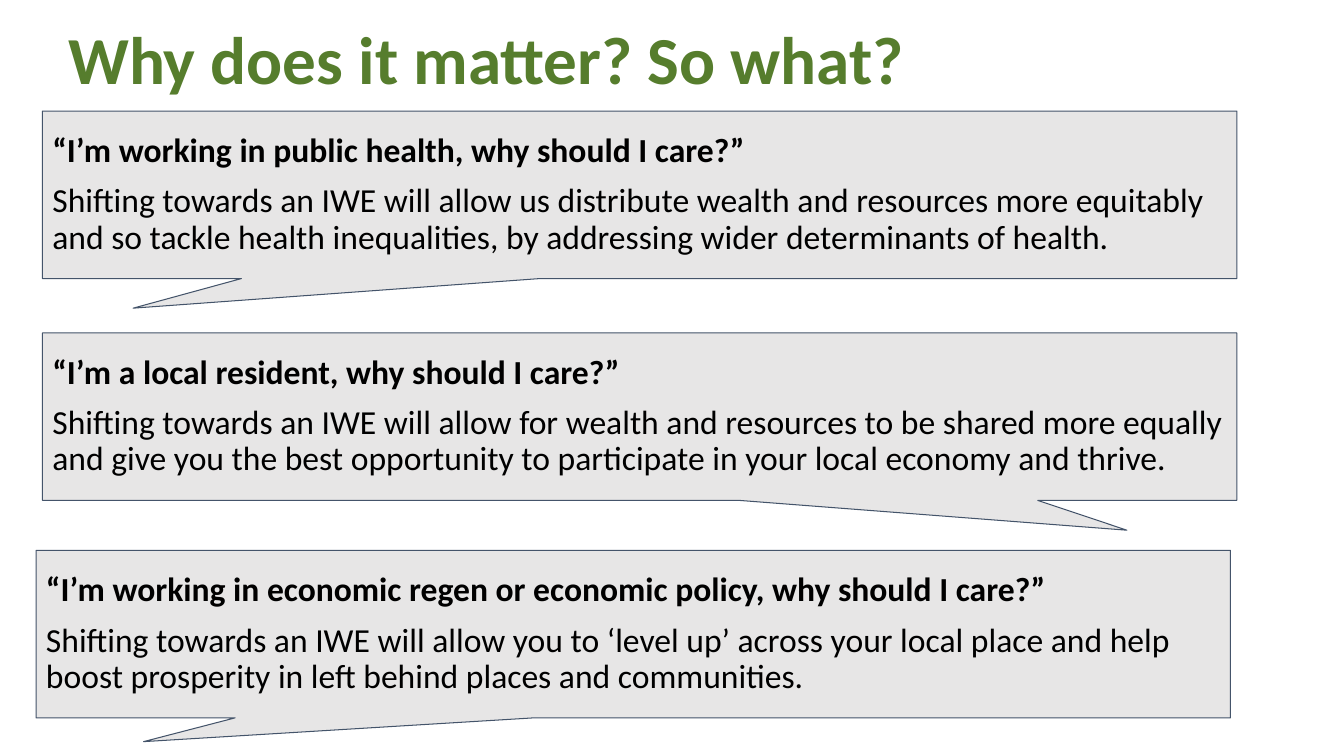
from pptx import Presentation
from pptx import util as u
from pptx.dml.color import RGBColor
from pptx.enum import shapes, text

COLORS = {"title": "567D2D", "body": "000000", "bubble": "E7E6E6", "outline": "44546A"}


def write(frame, content, size=24, color="body", bold=False, before=0, first=False):
    paragraph = frame.paragraphs[0] if first else frame.add_paragraph()
    paragraph.alignment = text.PP_ALIGN.LEFT
    paragraph.line_spacing = 0.9
    paragraph.space_before = u.Pt(before)
    run = paragraph.add_run()
    run.text = content
    run.font.name = "Calibri"
    run.font.size = u.Pt(size)
    run.font.bold = bold
    run.font.color.rgb = RGBColor.from_string(COLORS[color])


class SlideWriter:
    """Draws the heading and speech bubbles in one style on the current slide."""

    def __init__(self, slide):
        self.slide = slide

    def prepare(self, frame, anchor, margin):
        frame.word_wrap = True
        frame.vertical_anchor = anchor
        frame.margin_left = frame.margin_right = u.Cm(0.25)
        frame.margin_top = frame.margin_bottom = u.Cm(margin)
        return frame

    def heading(self, content, left, top, width, height):
        box = self.slide.shapes.add_textbox(u.Cm(left), u.Cm(top), u.Cm(width), u.Cm(height))
        frame = self.prepare(box.text_frame, text.MSO_ANCHOR.BOTTOM, 0.13)
        write(frame, content, size=48, color="title", bold=True, first=True)

    def bubble(self, question, answer, left, top, tail):
        bubble = self.slide.shapes.add_shape(
            shapes.MSO_SHAPE.ROUNDED_RECTANGULAR_CALLOUT,
            u.Cm(left), u.Cm(top), u.Cm(30.1), u.Cm(4.22))
        for index, value in enumerate((*tail, 0)):
            bubble.adjustments[index] = value
        bubble.shadow.inherit = False
        bubble.fill.solid()
        bubble.fill.fore_color.rgb = RGBColor.from_string(COLORS["bubble"])
        bubble.line.color.rgb = RGBColor.from_string(COLORS["outline"])
        bubble.line.width = u.Pt(0.75)
        frame = self.prepare(bubble.text_frame, text.MSO_ANCHOR.MIDDLE, 0.25)
        write(frame, question, bold=True, first=True)
        write(frame, answer, before=10)


def main():
    deck = Presentation()
    deck.slide_width, deck.slide_height = u.Cm(33.87), u.Cm(19.05)
    writer = SlideWriter(deck.slides.add_slide(deck.slide_layouts[6]))
    writer.heading("Why does it matter? So what?", 1.47, 0, 32.38, 2.62)
    concerns = [
        ("“I’m working in public health, why should I care?”",
         "Shifting towards an IWE will allow us distribute wealth and resources more "
         "equitably and so tackle health inequalities, by addressing wider determinants "
         "of health.", 1.07, 2.8, (-0.424, 0.677)),
        ("“I’m a local resident, why should I care?”",
         "Shifting towards an IWE will allow for wealth and resources to be shared more "
         "equally and give you the best opportunity to participate in your local economy "
         "and thrive.", 1.07, 8.39, (0.408, 0.678)),
        ("“I’m working in economic regen or economic policy, why should I care?”",
         "Shifting towards an IWE will allow you to ‘level up’ across your local place "
         "and help boost prosperity in left behind places and communities.",
         0.91, 13.87, (-0.41, 0.642)),
    ]
    for concern in concerns:
        writer.bubble(*concern)
    deck.save("out.pptx")


if __name__ == "__main__":
    main()
